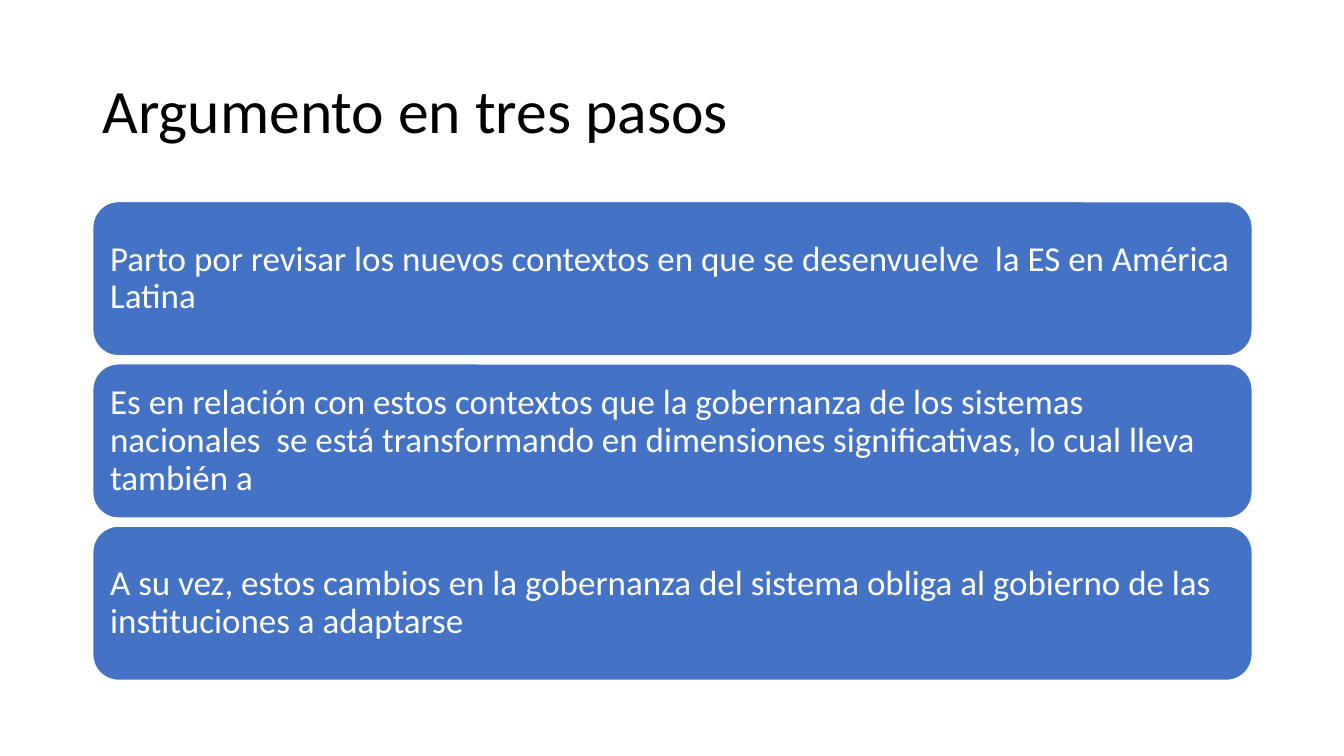
import pptx
import pptx.dml.color
import pptx.enum.shapes
import pptx.enum.text
import pptx.util

BLACK = pptx.dml.color.RGBColor(0x00, 0x00, 0x00)
WHITE = pptx.dml.color.RGBColor(0xFF, 0xFF, 0xFF)
BLUE = pptx.dml.color.RGBColor(0x44, 0x72, 0xC4)

WIDTH, HEIGHT = 13.33, 7.5
MARGIN = 0.92
CONTENT_WIDTH = 11.5
STEP_GAP = 0.08

STEPS = [
    "Parto por revisar los nuevos contextos en que se desenvuelve  la ES en América Latina",
    "Es en relación con estos contextos que la gobernanza de los sistemas nacionales  "
    "se está transformando en dimensiones significativas, lo cual lleva también a",
    "A su vez, estos cambios en la gobernanza del sistema obliga al gobierno de las "
    "instituciones a adaptarse",
]


def write_text(shape, text, *, size, color, inset_x=0.1, inset_y=0.1):
    frame = shape.text_frame
    frame.word_wrap = True
    frame.vertical_anchor = pptx.enum.text.MSO_ANCHOR.MIDDLE
    frame.margin_left = frame.margin_right = pptx.util.Inches(inset_x)
    frame.margin_top = frame.margin_bottom = pptx.util.Inches(inset_y)
    para = frame.paragraphs[0]
    para.alignment = pptx.enum.text.PP_ALIGN.LEFT
    para.line_spacing = 0.9
    span = para.add_run()
    span.text = text
    span.font.name = "Calibri"
    span.font.size = pptx.util.Pt(size)
    span.font.color.rgb = color


def add_title(page, text, left, top, width, height):
    box = page.shapes.add_textbox(*map(pptx.util.Inches, (left, top, width, height)))
    write_text(box, text, size=44, color=BLACK, inset_y=0.05)


def add_steps(page, steps, left, top, width, height):
    """Stack equal rounded bars that fill the given box."""
    bar_height = (height - STEP_GAP * (len(steps) - 1)) / len(steps)
    for row, text in enumerate(steps):
        bar_top = top + row * (bar_height + STEP_GAP)
        bar = page.shapes.add_shape(
            pptx.enum.shapes.MSO_SHAPE.ROUNDED_RECTANGLE,
            *map(pptx.util.Inches, (left, bar_top, width, bar_height)),
        )
        bar.shadow.inherit = False
        bar.fill.solid()
        bar.fill.fore_color.rgb = BLUE
        bar.line.color.rgb = WHITE
        bar.line.width = pptx.util.Pt(1)
        write_text(bar, text, size=25, color=WHITE)


def main():
    deck = pptx.Presentation()
    deck.slide_width = pptx.util.Inches(WIDTH)
    deck.slide_height = pptx.util.Inches(HEIGHT)
    page = deck.slides.add_slide(deck.slide_layouts[6])
    add_title(page, "Argumento en tres pasos", MARGIN, 0.4, CONTENT_WIDTH, 1.45)
    add_steps(page, STEPS, MARGIN, 2, CONTENT_WIDTH, 4.75)
    deck.save("out.pptx")


if __name__ == "__main__":
    main()
